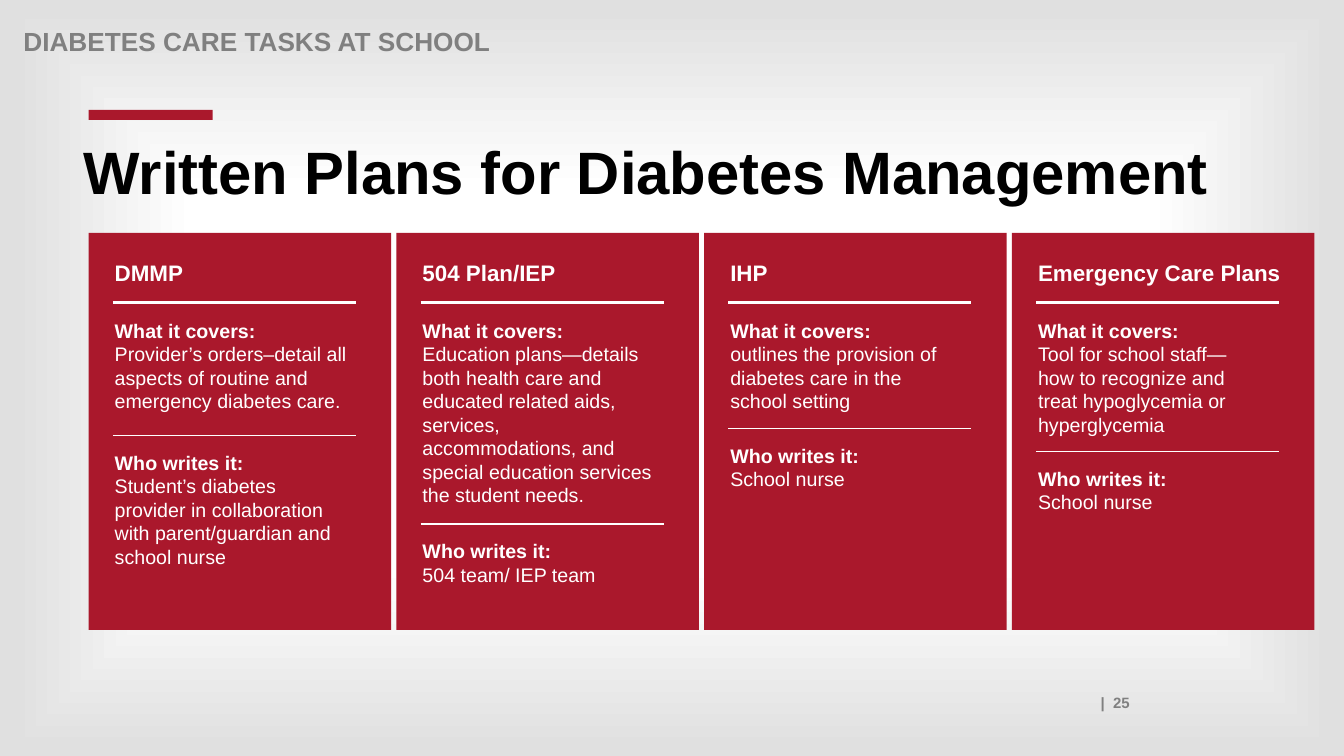
from lxml import etree
from pptx import Presentation
from pptx.dml.color import RGBColor
from pptx.enum.shapes import MSO_CONNECTOR, MSO_SHAPE
from pptx.enum.text import PP_ALIGN
from pptx.oxml import parse_xml
from pptx.oxml.ns import nsdecls, qn
from pptx.util import Inches, Pt

RECTANGLE = MSO_SHAPE.RECTANGLE
STRAIGHT = MSO_CONNECTOR.STRAIGHT
RIGHT = PP_ALIGN.RIGHT

WIDTH, HEIGHT = Inches(13.33), Inches(7.5)
FONT = "Arial"
COLORS = {"red": "AA182C", "white": "FFFFFF", "gray": "808080",
          "black": "000000", "edge": "E0E0E0"}

# Lengths are percentages of the slide's width or height.
CARD_LEFT, CARD_PITCH, CARD_WIDTH = 6.6, 22.9, 22.5
CARD_TOP, CARD_HEIGHT = 30.8, 52.53
TEXT_INDENT, RULE_INDENT, RULE_WIDTH = 1.2, 1.8, 18.08
HEADING_TOP, HEADING_RULE, COVERS_TOP = 33.6, 40, 41.47
DIVIDER_GAP = 1.33

CARDS = [
    {"heading": "DMMP", "divider": 57.6, "text_width": 18.75,
     "covers": "Provider’s orders–detail all aspects of routine and "
               "emergency diabetes care.",
     "writer": "Student’s diabetes provider in collaboration with "
               "parent/guardian and school nurse"},
    {"heading": "504 Plan/IEP", "divider": 69.33, "text_width": 18.75,
     "covers": "Education plans—details both health care and educated related "
               "aids, services, accommodations, and special education "
               "services the student needs.",
     "writer": "504 team/ IEP team"},
    {"heading": "IHP", "divider": 56.67, "text_width": 18,
     "covers": "outlines the provision of diabetes care in the school setting",
     "writer": "School nurse"},
    {"heading": "Emergency Care Plans", "divider": 59.73, "text_width": 16.6,
     "covers": "Tool for school staff—how to recognize and treat "
               "hypoglycemia or hyperglycemia",
     "writer": "School nurse"},
]


def across(percent):
    return int(WIDTH * percent / 100)


def down(percent):
    return int(HEIGHT * percent / 100)


def rgb(name):
    return RGBColor.from_string(COLORS[name])


def set_background(slide):
    """Fill the slide with white that fades to gray at its edges."""
    stops = "".join(
        f'<a:gs pos="{percent * 1000}"><a:srgbClr val="{COLORS[name]}"/></a:gs>'
        for percent, name in [(12, "white"), (50, "white"), (98, "edge")])
    background = parse_xml(
        f'<p:bg {nsdecls("p", "a")}><p:bgPr>'
        f'<a:gradFill rotWithShape="1"><a:gsLst>{stops}</a:gsLst>'
        '<a:path path="shape">'
        '<a:fillToRect l="50000" t="50000" r="50000" b="50000"/>'
        '</a:path></a:gradFill><a:effectLst/></p:bgPr></p:bg>')
    slide.element.cSld.insert(0, background)


def add_block(slide, left, top, width, height):
    block = slide.shapes.add_shape(
        RECTANGLE, across(left), down(top), across(width), down(height))
    block.shadow.inherit = False
    block.fill.solid()
    block.fill.fore_color.rgb = rgb("red")
    block.line.fill.background()


def add_rule(slide, left, top, weight):
    rule = slide.shapes.add_connector(
        STRAIGHT, across(left), down(top), across(left + RULE_WIDTH), down(top))
    rule.line.color.rgb = rgb("white")
    rule.line.width = Pt(weight)
    etree.SubElement(rule.element.spPr, qn("a:effectLst"))


def add_text(slide, box, lines, size, color, **paragraph_format):
    """Write a bold first line, then any further lines in regular weight."""
    left, top, width, height = box
    frame = slide.shapes.add_textbox(
        across(left), down(top), across(width), down(height)).text_frame
    frame.word_wrap = True
    paragraph = frame.paragraphs[0]
    for name, value in paragraph_format.items():
        setattr(paragraph, name, value)
    for index, line in enumerate(lines):
        if index:
            paragraph.add_line_break()
        run = paragraph.add_run()
        run.text = line
        font_format = {"name": FONT, "size": Pt(size), "bold": index == 0}
        for name, value in font_format.items():
            setattr(run.font, name, value)
        run.font.color.rgb = rgb(color)


def add_card(slide, column, card):
    left = CARD_LEFT + column * CARD_PITCH
    text_left, rule_left = left + TEXT_INDENT, left + RULE_INDENT
    divider, text_width = card["divider"], card["text_width"]
    writer_top = divider + DIVIDER_GAP

    add_block(slide, left, CARD_TOP, CARD_WIDTH, CARD_HEIGHT)
    add_text(slide, (text_left, HEADING_TOP, 19.8, 4.9),
             [card["heading"]], 16, "white")
    add_text(slide, (text_left, COVERS_TOP, text_width, divider - COVERS_TOP),
             ["What it covers:", card["covers"]], 14, "white")
    add_text(slide, (text_left, writer_top, text_width, 7.6),
             ["Who writes it:", card["writer"]], 14, "white")
    add_rule(slide, rule_left, HEADING_RULE, 2)
    add_rule(slide, rule_left, divider, 1)


def main():
    presentation = Presentation()
    presentation.slide_width, presentation.slide_height = WIDTH, HEIGHT
    slide = presentation.slides.add_slide(presentation.slide_layouts[6])

    set_background(slide)
    add_text(slide, (9.1, 91.1, 75.7, 3.7), ["|  25"], 10.7, "gray",
             alignment=RIGHT)
    add_text(slide, (1, 3.2, 82.5, 3.7), ["DIABETES CARE TASKS AT SCHOOL"],
             18.7, "gray", line_spacing=0.9)
    add_block(slide, CARD_LEFT, 14.53, 9.23, 1.33)
    add_text(slide, (5.48, 18.27, 86.9, 11.5),
             ["Written Plans for Diabetes Management"], 42.7, "black",
             line_spacing=0.9)
    for column, card in enumerate(CARDS):
        add_card(slide, column, card)

    presentation.save("out.pptx")


if __name__ == "__main__":
    main()
